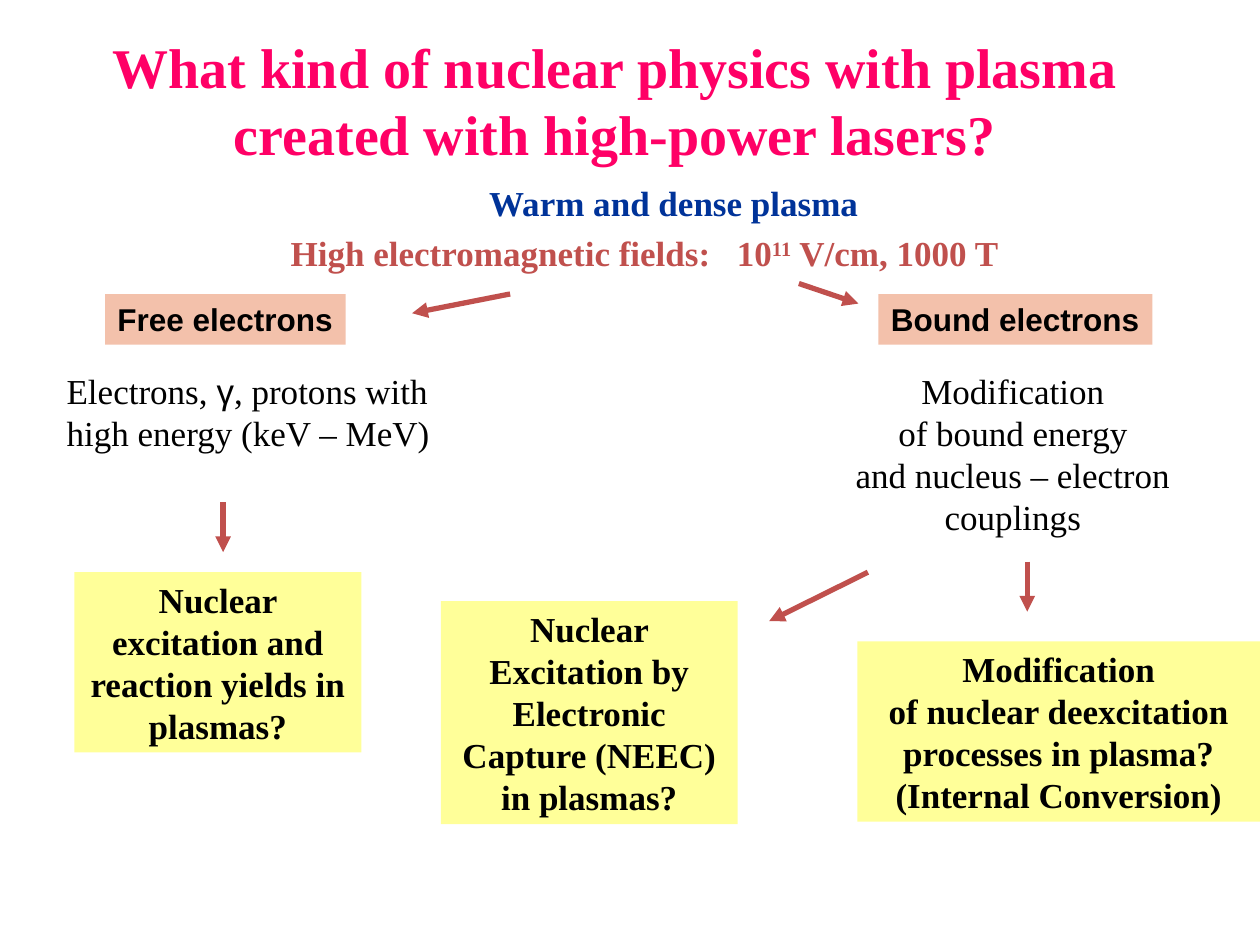
from lxml import etree
from pptx import Presentation
from pptx import util as u
from pptx.dml.color import RGBColor
from pptx.enum import shapes, text
from pptx.oxml.ns import qn

Pt = u.Pt
PINK = RGBColor(0xFF, 0x00, 0x66)
NAVY = RGBColor(0x00, 0x33, 0x99)
RED = RGBColor(0xC0, 0x50, 0x4D)
BLACK = RGBColor(0x00, 0x00, 0x00)
YELLOW = RGBColor(0xFF, 0xFF, 0x99)
PEACH = RGBColor(0xF3, 0xC1, 0xAB)
SERIF = "Times New Roman"
SANS = "Arial"
LEFT = text.PP_ALIGN.LEFT
CENTER = text.PP_ALIGN.CENTER


def add_span(para, words, size, color, bold, font=SERIF):
    span = para.add_run()
    span.text = words
    span.font.name = font
    span.font.size = Pt(size)
    span.font.bold = bold
    span.font.color.rgb = color
    return span


def prepare_frame(box, wrap=True):
    frame = box.text_frame
    frame.word_wrap = wrap
    frame.auto_size = text.MSO_AUTO_SIZE.NONE
    frame.vertical_anchor = text.MSO_ANCHOR.TOP
    return frame


deck = Presentation()
deck.slide_width = Pt(720)
deck.slide_height = Pt(540)
page = deck.slides.add_slide(deck.slide_layouts[5])

title = page.shapes.title
title.left, title.top, title.width, title.height = Pt(31), Pt(15), Pt(641), Pt(84)
para = prepare_frame(title).paragraphs[0]
para.alignment = CENTER
add_span(para, "What kind of nuclear physics with plasma created with high-power lasers?", 32, PINK, True)

conditions = page.shapes.add_textbox(Pt(116), Pt(100), Pt(538), Pt(60))
frame = prepare_frame(conditions)
para = frame.paragraphs[0]
para.alignment = CENTER
add_span(para, "Warm and dense plasma", 20, NAVY, True)
para = frame.add_paragraph()
para.alignment = LEFT
para.space_before = Pt(5)
tabs = etree.SubElement(para._p.get_or_add_pPr(), qn("a:tabLst"))
for stop in (43, 298):
    etree.SubElement(tabs, qn("a:tab"), pos=str(int(Pt(stop))), algn="l")
add_span(para, "\tHigh electromagnetic fields:\t10", 20, RED, True)
exponent = add_span(para, "11", 20, RED, True)
exponent.font._element.set("baseline", "30000")
add_span(para, " V/cm, 1000 T", 20, RED, True)

free_effects = page.shapes.add_textbox(Pt(31), Pt(207.5), Pt(272), Pt(55.5))
frame = prepare_frame(free_effects)
para = frame.paragraphs[0]
add_span(para, "Electrons, ", 20, BLACK, False)
add_span(para, "γ", 20, BLACK, False, SANS)
add_span(para, ", protons with", 20, BLACK, False)
add_span(frame.add_paragraph(), "high energy (keV – MeV)", 20, BLACK, False)

bound_effects = page.shapes.add_textbox(Pt(479.5), Pt(207.5), Pt(198.5), Pt(103))
frame = prepare_frame(bound_effects, wrap=False)
lines = ["Modification", "of bound energy", "and nucleus – electron", "couplings"]
for number, line in enumerate(lines):
    para = frame.add_paragraph() if number else frame.paragraphs[0]
    para.alignment = CENTER
    add_span(para, line, 20, BLACK, False)

filled_boxes = [
    (60, 168, 137.5, 29, PEACH, 18, SANS, LEFT, ["Free electrons"]),
    (502, 168, 156.5, 29, PEACH, 18, SANS, LEFT, ["Bound electrons"]),
    (42.5, 327, 164, 103, YELLOW, 20, SERIF, CENTER,
     ["Nuclear excitation and reaction yields in plasmas?"]),
    (252, 343.5, 169.5, 127.5, YELLOW, 20, SERIF, CENTER,
     ["Nuclear Excitation by Electronic Capture (NEEC) in plasmas?"]),
    (490, 366.5, 230, 103, YELLOW, 20, SERIF, CENTER,
     ["Modification", "of nuclear deexcitation processes in plasma?", "(Internal Conversion)"]),
]
for left, top, width, height, fill, size, font, align, lines in filled_boxes:
    box = page.shapes.add_shape(
        shapes.MSO_SHAPE.RECTANGLE, Pt(left), Pt(top), Pt(width), Pt(height))
    box.shadow.inherit = False
    box.fill.solid()
    box.fill.fore_color.rgb = fill
    box.line.fill.background()
    frame = prepare_frame(box, wrap=fill == YELLOW)
    for number, line in enumerate(lines):
        para = frame.add_paragraph() if number else frame.paragraphs[0]
        para.alignment = align
        add_span(para, line, size, BLACK, True, font)

arrows = [
    (291.5, 168, 235.5, 179),
    (456.5, 162, 490.5, 173.5),
    (127.5, 287, 127.5, 315.5),
    (496, 327, 439.5, 355),
    (587, 321, 587, 349.5),
]
for ends in arrows:
    arrow = page.shapes.add_connector(shapes.MSO_CONNECTOR.STRAIGHT, *map(Pt, ends))
    arrow.line.color.rgb = RED
    arrow.line.width = Pt(3)
    etree.SubElement(arrow.line._get_or_add_ln(), qn("a:tailEnd"), type="triangle")
    etree.SubElement(arrow._element.spPr, qn("a:effectLst"))

deck.save("out.pptx")
